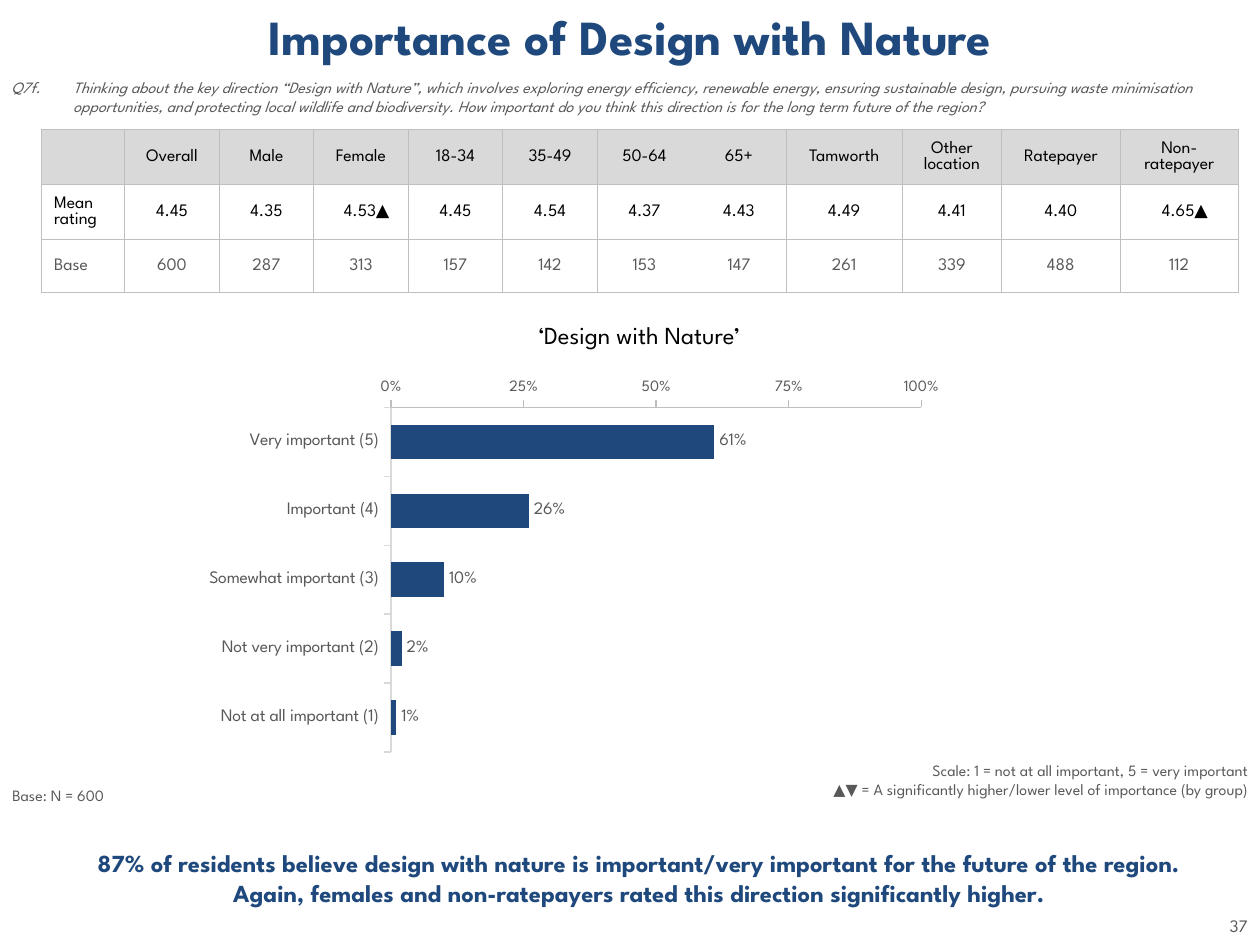
from lxml.etree import SubElement as Sub
from pptx import Presentation
from pptx.chart.data import CategoryChartData as Data
from pptx.dml.color import RGBColor
from pptx.enum.chart import XL_AXIS_CROSSES as Cross
from pptx.enum.chart import XL_CHART_TYPE as Kind
from pptx.enum.chart import XL_LABEL_POSITION as Spot
from pptx.enum.chart import XL_TICK_MARK as Tick
from pptx.enum.text import MSO_ANCHOR as Anchor
from pptx.enum.text import MSO_AUTO_SIZE as Fit
from pptx.enum.text import PP_ALIGN as Align
from pptx.oxml.ns import qn
from pptx.util import Inches, Pt

NAVY, GREY, BLACK = "1F497D", "595959", "000000"
RULE, PALE, SHADE = "BFBFBF", "D9D9D9", "D9D9D9"
PLAIN = "{2D5ABB26-0587-4C30-8999-92F81FD0307C}"


def tint(code):
    return RGBColor.from_string(code)


def put(item, **values):
    for key, value in values.items():
        setattr(item, key, value)


class Page:
    face = "League Spartan"

    def __init__(self, slide):
        self.slide = slide

    def font(self, font, size, color, **values):
        put(font, name=self.face, size=Pt(size), **values)
        font.color.rgb = tint(color)

    def fill(self, frame, text, size, color, align=Align.LEFT, gap=0, hang=0, **values):
        frame.text = text
        for para in frame.paragraphs:
            put(para, alignment=align, space_before=Pt(size * gap))
            props = para._p.get_or_add_pPr()
            props.set("marL", str(Inches(hang)))
            props.set("indent", str(-Inches(hang)))
            Sub(props, qn("a:buNone"))
            for run in para.runs:
                self.font(run.font, size, color, **values)

    def holder(self, index, area, text, size, color, anchor=Anchor.MIDDLE, **values):
        shape = self.slide.placeholders[index]
        put(shape, **dict(zip(("left", "top", "width", "height"), map(Inches, area))))
        put(shape.text_frame, word_wrap=True, auto_size=Fit.NONE, vertical_anchor=anchor)
        self.fill(shape.text_frame, text, size, color, gap=0.2, **values)

    def label(self, area, text, size, color, fit=Fit.SHAPE_TO_FIT_TEXT, **values):
        frame = self.slide.shapes.add_textbox(*map(Inches, area)).text_frame
        put(frame, word_wrap=True, auto_size=fit)
        self.fill(frame, text, size, color, **values)

    def edge(self, cell, sides):
        props = cell._tc.get_or_add_tcPr()
        for side in sides:
            line = Sub(props, qn("a:ln" + side), w=str(Pt(0.5)))
            Sub(Sub(line, qn("a:solidFill")), qn("a:srgbClr"), val=RULE)

    def cell(self, cell, text, row, first, sides):
        self.edge(cell, sides)
        if row == 0:
            cell.fill.solid()
            cell.fill.fore_color.rgb = tint(SHADE)
        else:
            cell.fill.background()
        cell.vertical_anchor = Anchor.MIDDLE
        align = Align.LEFT if first else Align.CENTER
        self.fill(cell.text_frame, text, 10, GREY if row == 2 else BLACK, align=align)
        if "▲" in text:
            cell.text_frame.paragraphs[0]._p.pPr.set("marL", str(Inches(0.09)))
        if row == 1 and not first:
            thin = Inches(0.01)
            put(cell, margin_left=thin, margin_right=thin, margin_top=thin, margin_bottom=0)

    def table(self, area, widths, rows, joined):
        table = self.slide.shapes.add_table(len(rows), len(widths), *map(Inches, area)).table
        put(table, first_row=False, horz_banding=False)
        table._tbl.tblPr.find(qn("a:tableStyleId")).text = PLAIN
        for column, width in zip(table.columns, widths):
            column.width = Inches(width)
        for r, texts in enumerate(rows):
            for c, text in enumerate(texts):
                left = "" if c - 1 in joined else "L"
                right = "" if c in joined else "R"
                self.cell(table.cell(r, c), text, r, c == 0, left + right + "TB")

    def axis(self, axis, size, line):
        put(axis, has_major_gridlines=False, major_tick_mark=Tick.OUTSIDE, minor_tick_mark=Tick.NONE)
        self.font(axis.tick_labels.font, size, GREY)
        axis.format.line.width = Pt(0.75)
        axis.format.line.color.rgb = tint(line)

    def chart(self, area, names, values):
        data = Data(number_format="0%")
        data.categories = names
        data.add_series("Series 1", values)
        chart = self.slide.shapes.add_chart(Kind.BAR_CLUSTERED, *map(Inches, area), data).chart
        put(chart, has_legend=False, has_title=False)
        self.font(chart.font, 10, BLACK)
        self.axis(chart.category_axis, 10, PALE)
        put(chart.category_axis, reverse_order=True, crosses=Cross.MAXIMUM)
        self.axis(chart.value_axis, 9, RULE)
        put(chart.value_axis, minimum_scale=0, maximum_scale=1, major_unit=0.25)
        put(chart.value_axis.tick_labels, number_format="0%", number_format_is_linked=False)
        plot = chart.plots[0]
        put(plot, gap_width=100, vary_by_categories=False, has_data_labels=True)
        bars = plot.series[0].format.fill
        bars.solid()
        bars.fore_color.rgb = tint(NAVY)
        put(plot.data_labels, show_value=True, number_format="0%",
            number_format_is_linked=False, position=Spot.OUTSIDE_END)
        self.font(plot.data_labels.font, 10, GREY)


def main():
    deck = Presentation()
    put(deck, slide_width=Inches(10), slide_height=Inches(7.5))
    page = Page(deck.slides.add_slide(deck.slide_layouts[3]))

    page.holder(0, (0, 0, 10, 0.55), "Importance of Design with Nature", 28, NAVY,
                anchor=Anchor.TOP, align=Align.CENTER, bold=True)
    page.holder(1, (-0.01, 0.57, 10, 0.4),
                "Q7f.\tThinking about the key direction “Design with Nature”, which involves "
                "exploring energy efficiency, renewable energy, ensuring sustainable design, "
                "pursuing waste minimisation opportunities, and protecting local wildlife and "
                "biodiversity. How important do you think this direction is for the long term "
                "future of the region?", 9, GREY, hang=0.49, italic=True)
    page.holder(2, (0.51, 6.43, 9.13, 1.07),
                "87% of residents believe design with nature is important/very important for "
                "the future of the region. Again, females and non-ratepayers rated this "
                "direction significantly higher.", 14, NAVY, align=Align.CENTER, bold=True)

    page.label((0, 6.19, 5, 0.23), "Base: N = 600", 9, GREY, fit=Fit.NONE, gap=0.2)
    page.label((5.63, 5.99, 4.37, 0.4),
               "Scale: 1 = not at all important, 5 = very important\n"
               "▲▼ = A significantly higher/lower level of importance (by group)",
               9, GREY, align=Align.RIGHT)
    page.label((9.57, 7.21, 0.43, 0.27), "37", 10, GREY, align=Align.RIGHT)

    page.chart((1.54, 2.96, 6.03, 3.07),
               ("Very important (5)", "Important (4)", "Somewhat important (3)",
                "Not very important (2)", "Not at all important (1)"),
               (0.61, 0.26, 0.1, 0.02, 0.01))
    page.label((2.32, 2.49, 5.51, 0.34), "‘Design with Nature’", 14, BLACK, align=Align.CENTER)

    rows = (
        ("", "Overall", "Male", "Female", "18-34", "35-49", "50-64", "65+", "Tamworth",
         "Other location", "Ratepayer", "Non-ratepayer"),
        ("Mean rating", "4.45", "4.35", "4.53▲", "4.45", "4.54", "4.37", "4.43", "4.49",
         "4.41", "4.40", "4.65▲"),
        ("Base", "600", "287", "313", "157", "142", "153", "147", "261", "339", "488", "112"),
    )
    widths = [0.66] + [0.75] * 7 + [0.92, 0.79, 0.94, 0.94]
    page.table((0.33, 1.03, 9.49, 1.27), widths, rows, joined=(5, 6, 8))

    deck.save("out.pptx")


if __name__ == "__main__":
    main()
